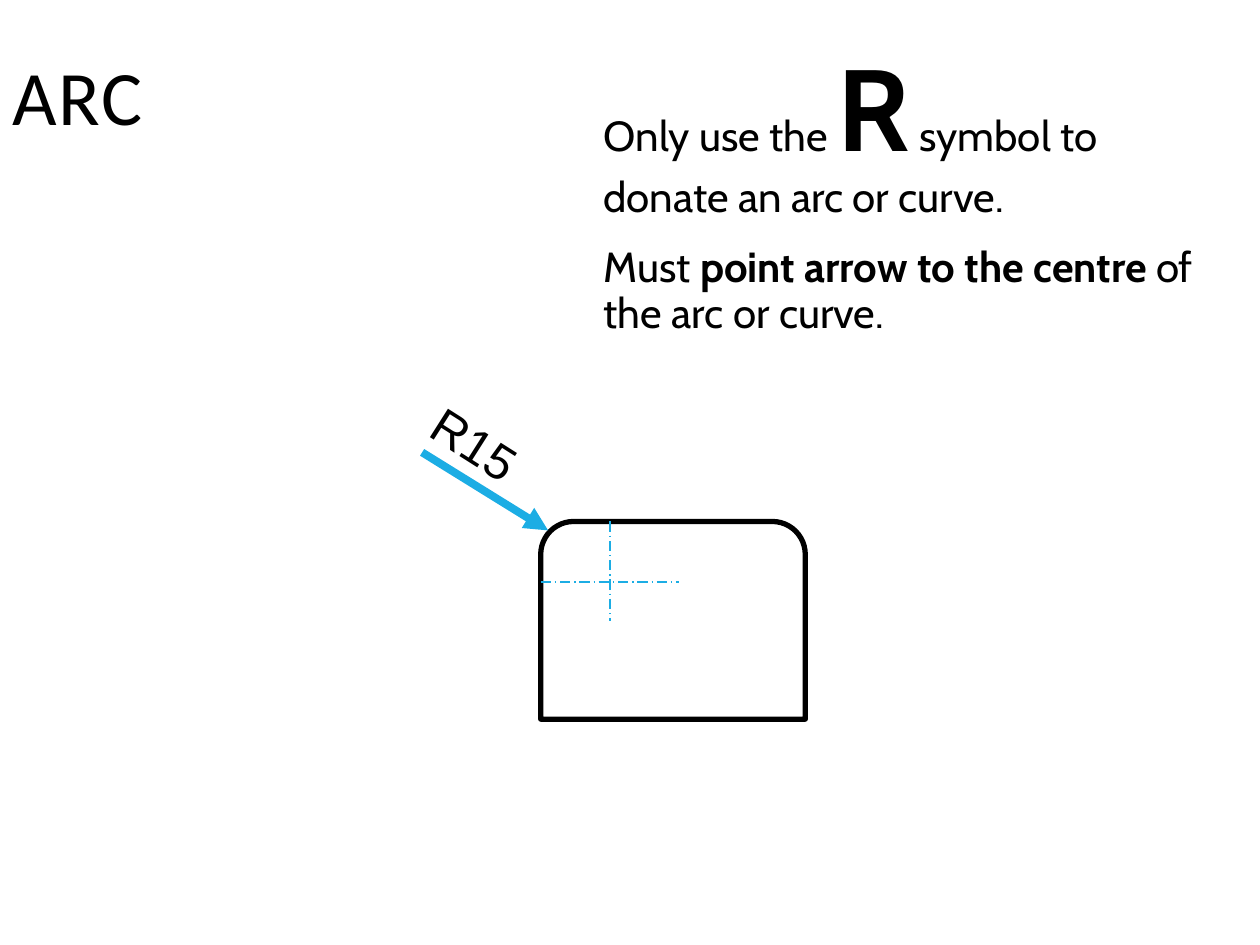
from lxml import etree
from pptx import Presentation
from pptx import util as u
from pptx.dml.color import RGBColor
from pptx.enum import dml, shapes, text
from pptx.oxml.ns import qn

COLORS = {"ink": "000000", "accent": "1CADE4", "paper": "FFFFFF"}


class SlideBuilder:
    def __init__(self, slide):
        self.slide = slide
        slide.background.fill.solid()
        slide.background.fill.fore_color.rgb = self.color("paper")

    def color(self, name):
        return RGBColor.from_string(COLORS[name])

    def place(self, shape, left, top, width, height):
        shape.left, shape.top = u.Pt(left), u.Pt(top)
        shape.width, shape.height = u.Pt(width), u.Pt(height)

    def style_font(self, font, name, size):
        font.name, font.size = name, u.Pt(size)
        font.color.rgb = self.color("ink")

    def style_line(self, line, color, width):
        line.color.rgb = self.color(color)
        line.width = u.Pt(width)

    def title(self, wording, box):
        shape = self.slide.shapes.title
        self.place(shape, *box)
        frame = shape.text_frame
        frame.vertical_anchor = text.MSO_ANCHOR.MIDDLE
        paragraph = frame.paragraphs[0]
        paragraph.alignment = text.PP_ALIGN.LEFT
        paragraph.line_spacing = 0.8
        run = paragraph.add_run()
        run.text = wording
        self.style_font(run.font, "Calibri", 44)
        run.font._element.set("spc", "100")

    def body(self, paragraphs, box):
        shape = self.slide.placeholders[1]
        self.place(shape, *box)
        frame = shape.text_frame
        frame.auto_size = text.MSO_AUTO_SIZE.NONE
        frame.vertical_anchor = text.MSO_ANCHOR.TOP
        for index, runs in enumerate(paragraphs):
            paragraph = frame.add_paragraph() if index else frame.paragraphs[0]
            paragraph.line_spacing = 0.9
            paragraph.space_before, paragraph.space_after = u.Pt(12), u.Pt(2)
            properties = paragraph._p.get_or_add_pPr()
            properties.set("marL", "0")
            properties.set("indent", "0")
            etree.SubElement(properties, qn("a:buNone"))
            for wording, size, bold in runs:
                run = paragraph.add_run()
                run.text = wording
                self.style_font(run.font, "Cabin", size)
                run.font.bold = bold

    def outline(self, kind, box, width):
        shape = self.slide.shapes.add_shape(kind, *map(u.Pt, box))
        shape.shadow.inherit = False
        shape.fill.background()
        self.style_line(shape.line, "ink", width)

    def connector(self, start, end, width, dash=None, arrow=False):
        connector = self.slide.shapes.add_connector(
            shapes.MSO_CONNECTOR.STRAIGHT, *map(u.Pt, start + end))
        self.style_line(connector.line, "accent", width)
        if dash:
            connector.line.dash_style = dash
        properties = connector._element.spPr
        if arrow:
            etree.SubElement(properties.find(qn("a:ln")), qn("a:tailEnd"), type="triangle")
        etree.SubElement(properties, qn("a:effectLst"))

    def label(self, wording, box, rotation):
        shape = self.slide.shapes.add_textbox(*map(u.Pt, box))
        shape.rotation = rotation
        frame = shape.text_frame
        frame.word_wrap = True
        frame.auto_size = text.MSO_AUTO_SIZE.SHAPE_TO_FIT_TEXT
        paragraph = frame.paragraphs[0]
        paragraph.text = wording
        self.style_font(paragraph.font, "Arial", 28)


def main():
    presentation = Presentation()
    presentation.slide_width, presentation.slide_height = u.Pt(720), u.Pt(540)
    builder = SlideBuilder(presentation.slides.add_slide(presentation.slide_layouts[1]))

    builder.title("ARC", (0, 0, 223.2, 118))
    builder.body([
        [("Only use the ", 24, False), ("R", 66, True),
         (" symbol to donate an arc or curve.", 24, False)],
        [("Must ", 24, False), ("point arrow to the centre", 24, True),
         (" of the arc or curve.", 24, False)],
    ], (337.7, 26, 352.8, 499))

    left, top = 309, 298
    builder.outline(shapes.MSO_SHAPE.ROUND_2_SAME_RECTANGLE, (left, top, 151.2, 113), 3)
    centre_x, centre_y = 348.5, 332.6
    centre_dash = dml.MSO_LINE.LONG_DASH_DOT
    builder.connector((centre_x, top), (centre_x, 355), 0.75, centre_dash)
    builder.connector((left, centre_y), (388, centre_y), 0.75, centre_dash)
    builder.connector((241.2, 258.5), (313.2, 303.1), 4.5, arrow=True)
    builder.label("R15", (234, 249.1, 125.3, 41), 32.4)
    presentation.save("out.pptx")


if __name__ == "__main__":
    main()
